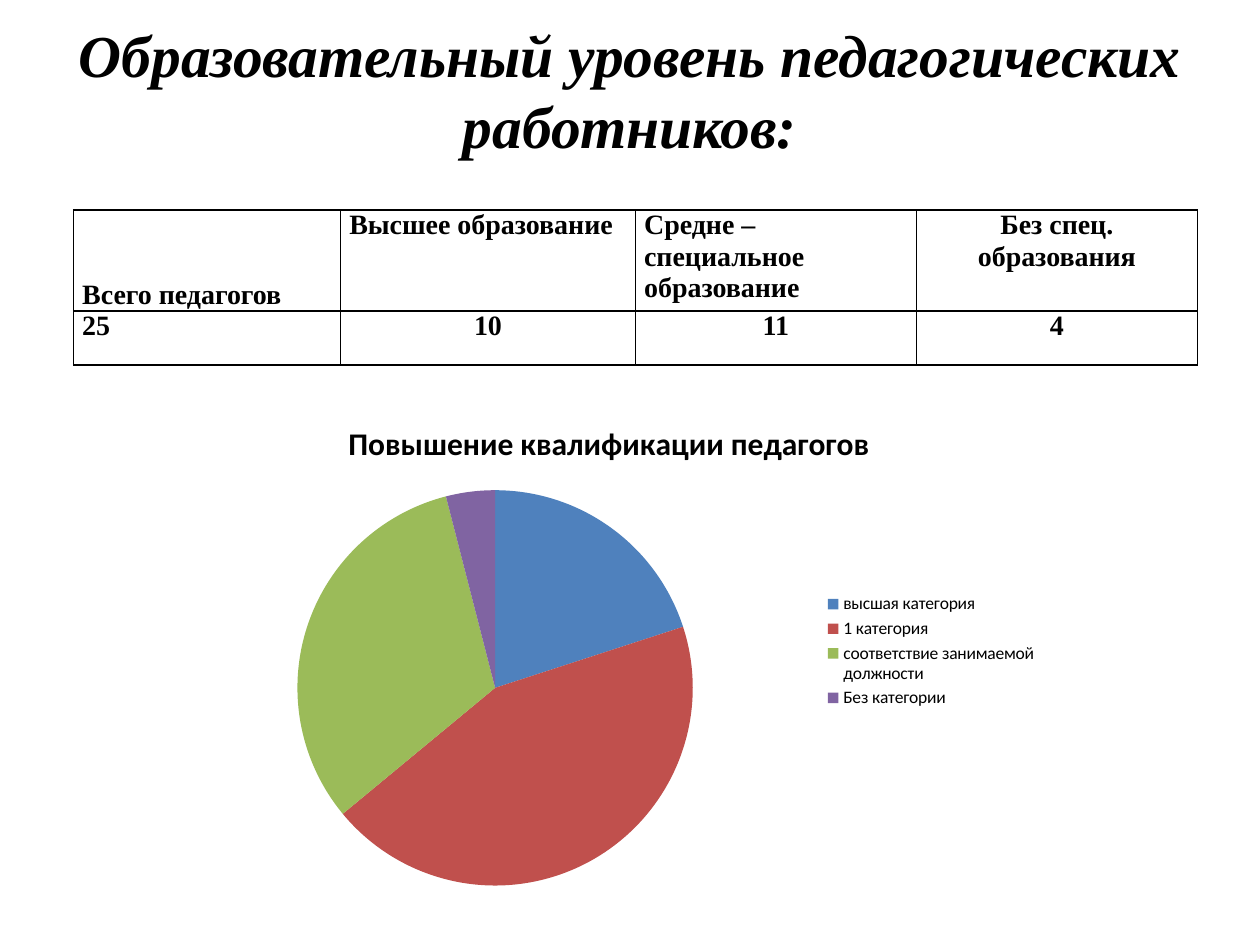
from dataclasses import dataclass
from lxml import etree
from pptx import Presentation, util as u
from pptx.chart import data as cd
from pptx.dml.color import RGBColor
from pptx.enum import chart as ch, text as tx
from pptx.oxml import ns

Pt = u.Pt
BLACK = RGBColor(0, 0, 0)
WHITE = RGBColor(255, 255, 255)
SLICES = [RGBColor(0x4F, 0x81, 0xBD), RGBColor(0xC0, 0x50, 0x4D),
          RGBColor(0x9B, 0xBB, 0x59), RGBColor(0x80, 0x64, 0xA2)]
SERIF, SANS = "Times New Roman", "Calibri"
LEFT, MID, JUST = tx.PP_ALIGN.LEFT, tx.PP_ALIGN.CENTER, tx.PP_ALIGN.JUSTIFY
TOP, LOW = tx.MSO_ANCHOR.TOP, tx.MSO_ANCHOR.BOTTOM


@dataclass
class Col:
    width: float
    head: str
    value: str
    align: tx.PP_ALIGN
    side: tx.PP_ALIGN = MID
    anchor: tx.MSO_ANCHOR = TOP


COLS = [
    Col(152.64, "Всего педагогов", "25", LEFT, LEFT, LOW),
    Col(168.48, "Высшее образование", "10", JUST),
    Col(160.56, "Средне – специальное образование", "11", LEFT),
    Col(160.56, "Без спец. образования", "4", MID),
]
RATES = {"высшая категория": 20, "1 категория": 44,
         "соответствие занимаемой должности": 32, "Без категории": 4}


def style(font, size: float, face: str, bold: bool = False, slant: bool = False) -> None:
    """Set the look of a font."""
    font.size, font.name, font.bold, font.italic = Pt(size), face, bold, slant
    font.color.rgb = BLACK


def write(frame, words: str, *, size: float, align=LEFT, face: str = SERIF,
          bold: bool = True, slant: bool = False) -> None:
    """Put formatted text into a text frame."""
    frame.word_wrap = True
    para = frame.paragraphs[0]
    para.alignment = align
    run = para.add_run()
    run.text = words
    style(run.font, size, face, bold, slant)


def edge(cell) -> None:
    """Draw thin black borders around a cell."""
    props = cell._tc.get_or_add_tcPr()
    for spot, side in enumerate(("lnL", "lnR", "lnT", "lnB")):
        line = etree.Element(ns.qn(f"a:{side}"), w=str(Pt(1)))
        fill = etree.SubElement(line, ns.qn("a:solidFill"))
        etree.SubElement(fill, ns.qn("a:srgbClr"), val=str(BLACK))
        props.insert(spot, line)


def put(cell, words: str, align, anchor) -> None:
    """Fill and format one table cell."""
    cell.margin_left = cell.margin_right = Pt(5)
    cell.margin_top = cell.margin_bottom = Pt(0)
    cell.vertical_anchor = anchor
    cell.fill.solid()
    cell.fill.fore_color.rgb = WHITE
    write(cell.text_frame, words, size=16, align=align)
    edge(cell)


def add_grid(slide) -> None:
    """Add the table of staff by education."""
    wide = sum(col.width for col in COLS)
    grid = slide.shapes.add_table(2, len(COLS), Pt(42), Pt(120), Pt(wide), Pt(84)).table
    grid.rows[0].height, grid.rows[1].height = Pt(53), Pt(31)
    for spot, col in enumerate(COLS):
        grid.columns[spot].width = Pt(col.width)
        put(grid.cell(0, spot), col.head, col.align, col.anchor)
        put(grid.cell(1, spot), col.value, col.side, TOP)


def add_pie(slide) -> None:
    """Add the pie chart of staff categories."""
    name = "Повышение квалификации педагогов"
    data = cd.CategoryChartData()
    data.categories = list(RATES)
    data.add_series(name, list(RATES.values()))
    pie = slide.shapes.add_chart(ch.XL_CHART_TYPE.PIE, Pt(96), Pt(228),
                                 Pt(504), Pt(288), data).chart
    style(pie.font, 10, SANS)
    pie.has_title = True
    write(pie.chart_title.text_frame, name, size=18, face=SANS, align=MID)
    pie.has_legend = True
    pie.legend.position = ch.XL_LEGEND_POSITION.RIGHT
    pie.legend.include_in_layout = False
    plot = pie.plots[0]
    plot.vary_by_categories = True
    for spot, hue in enumerate(SLICES):
        fill = plot.series[0].points[spot].format.fill
        fill.solid()
        fill.fore_color.rgb = hue


def main() -> None:
    """Build and save the slide."""
    deck = Presentation()
    deck.slide_width, deck.slide_height = Pt(720), Pt(540)
    slide = deck.slides.add_slide(deck.slide_layouts[6])
    box = slide.shapes.add_textbox(Pt(36), Pt(8), Pt(648), Pt(86))
    box.text_frame.vertical_anchor = tx.MSO_ANCHOR.MIDDLE
    write(box.text_frame, "Образовательный уровень педагогических работников:",
          size=34, align=MID, slant=True)
    add_grid(slide)
    add_pie(slide)
    deck.save("out.pptx")


if __name__ == "__main__":
    main()
